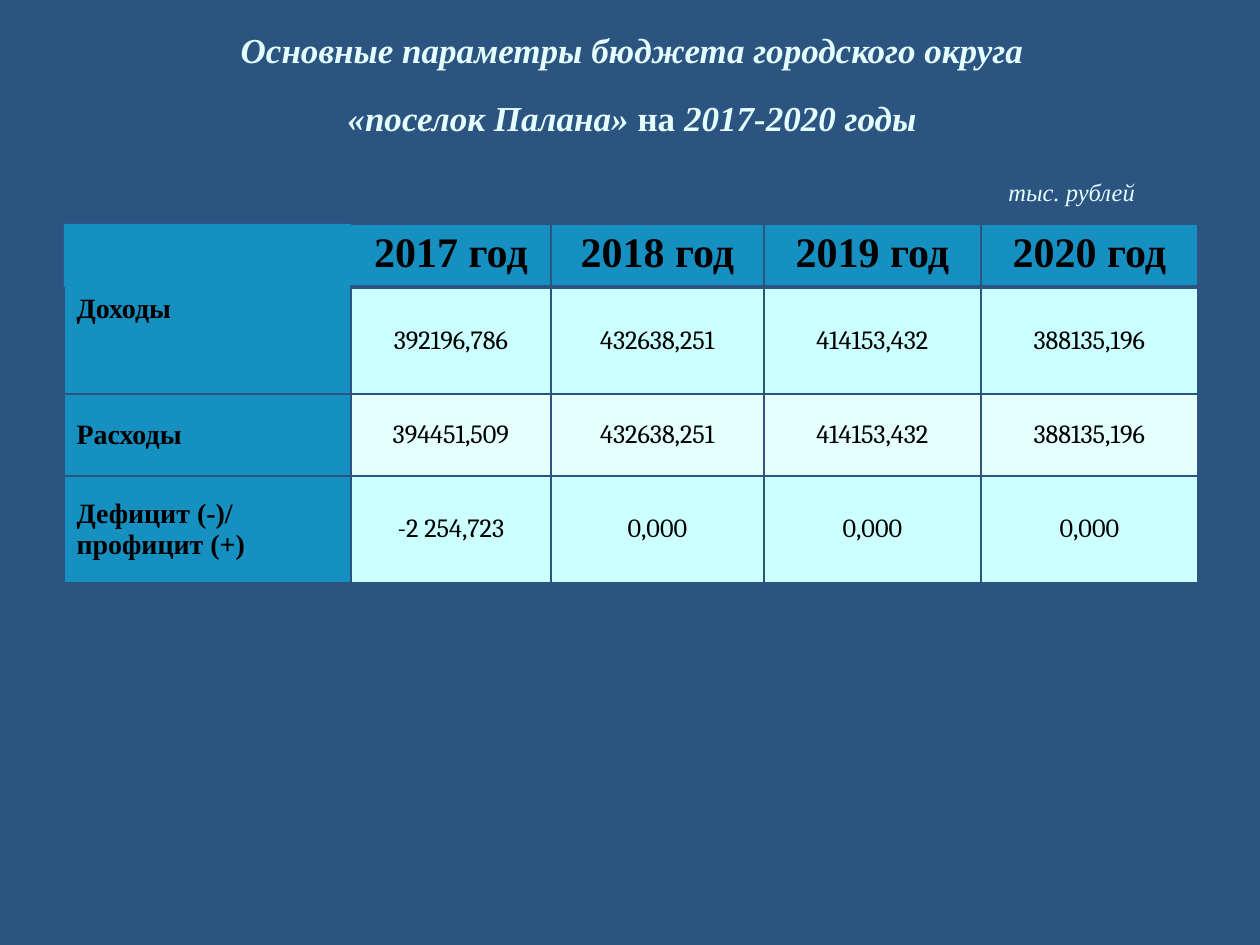
"""Build a slide with the main budget figures of a town for 2017-2020."""
from lxml import etree
from pptx import Presentation
from pptx.dml.color import RGBColor
from pptx.enum.text import MSO_ANCHOR, PP_ALIGN
from pptx.oxml.ns import qn
from pptx.util import Pt

PX = 914400 // 126
CENTER, LEFT = PP_ALIGN.CENTER, PP_ALIGN.LEFT
MIDDLE, TOP, BOTTOM = MSO_ANCHOR.MIDDLE, MSO_ANCHOR.TOP, MSO_ANCHOR.BOTTOM
NAVY, ICE, AQUA, CYAN, BLACK = "2B5481", "E5FFFF", "CCFFFF", "00CCFF", "000000"
SERIF, FIGURES = "Times New Roman", "Cambria"
PLAIN_TABLE = "{2D5ABB26-0587-4C30-8999-92F81FD0307C}"


def color(value):
    return RGBColor.from_string(value)


def style(font, name, size, hue, bold):
    font.name, font.size, font.bold = name, Pt(size), bold
    font.color.rgb = color(hue)


prs = Presentation()
prs.slide_width, prs.slide_height = 1260 * PX, 945 * PX
slide = prs.slides.add_slide(prs.slide_layouts[6])
slide.background.fill.solid()
slide.background.fill.fore_color.rgb = color(NAVY)

heading = slide.shapes.add_textbox(86 * PX, 82 * PX, 1092 * PX, 131 * PX).text_frame
heading.word_wrap = True
heading.vertical_anchor = BOTTOM
heading_lines = [
    (["Основные параметры бюджета городского округа"], 20, True, CENTER),
    (["«поселок Палана»", " на ", "2017-2020 годы"], 20, True, CENTER),
    (["тыс. рублей"], 14, False, LEFT),
]
for index, (parts, size, bold, align) in enumerate(heading_lines):
    line = heading.add_paragraph() if index else heading.paragraphs[0]
    line.alignment = align
    line.line_spacing = Pt(39)
    style(line.font, SERIF, size, ICE, bold)
    for part in parts:
        run = line.add_run()
        run.text = part
        run.font.italic = part != " на "
    if align == LEFT:
        line._p.get_or_add_pPr().set("marL", str(910 * PX))

budget = [
    ["", "2017 год", "2018 год", "2019 год", "2020 год"],
    ["Доходы", "392196,786", "432638,251", "414153,432", "388135,196"],
    ["Расходы", "394451,509", "432638,251", "414153,432", "388135,196"],
    ["Дефицит (-)/\nпрофицит (+)", "-2 254,723", "0,000", "0,000", "0,000"],
]
column_widths = [287, 200, 213, 217, 217]
row_heights = [63, 107, 82, 107]
table = slide.shapes.add_table(
    len(row_heights), len(column_widths), 64 * PX, 224 * PX,
    sum(column_widths) * PX, sum(row_heights) * PX).table
table.first_row = table.horz_banding = False
table._tbl.tblPr.find(qn("a:tableStyleId")).text = PLAIN_TABLE
for column, width in zip(table.columns, column_widths):
    column.width = width * PX
for row, height in zip(table.rows, row_heights):
    row.height = height * PX

for r, values in enumerate(budget):
    for c, value in enumerate(values):
        cell = table.cell(r, c)
        is_label = r == 0 or c == 0
        cell.text = value
        cell.vertical_anchor = MIDDLE if r > 1 or (r and c) else TOP
        for paragraph in cell.text_frame.paragraphs:
            paragraph.alignment = CENTER if c else LEFT
            size = 24 if r == 0 else 16 if c == 0 else 15
            style(paragraph.font, SERIF if is_label else FIGURES, size, BLACK, is_label)

        cell.fill.solid()
        cell.fill.fore_color.rgb = color(CYAN if is_label else AQUA if r % 2 else ICE)
        properties = cell._tc.get_or_add_tcPr()
        if is_label:
            tint = properties.find(qn("a:solidFill"))[0]
            etree.SubElement(tint, qn("a:alpha"), val="50000")

        borders = {"L": 1, "R": 1, "T": 3 if r == 1 else 1, "B": 1 if r else 3}
        if c == 0 and r == 0:
            borders = {}
        elif c == 0 and r == 1:
            del borders["T"]
        elif c == 1 and r == 0:
            del borders["L"]
        for position, (side, weight) in enumerate(borders.items()):
            border = etree.Element(qn(f"a:ln{side}"), w=str(Pt(weight)))
            paint = etree.SubElement(border, qn("a:solidFill"))
            etree.SubElement(paint, qn("a:srgbClr"), val=NAVY)
            properties.insert(position, border)

prs.save("out.pptx")
